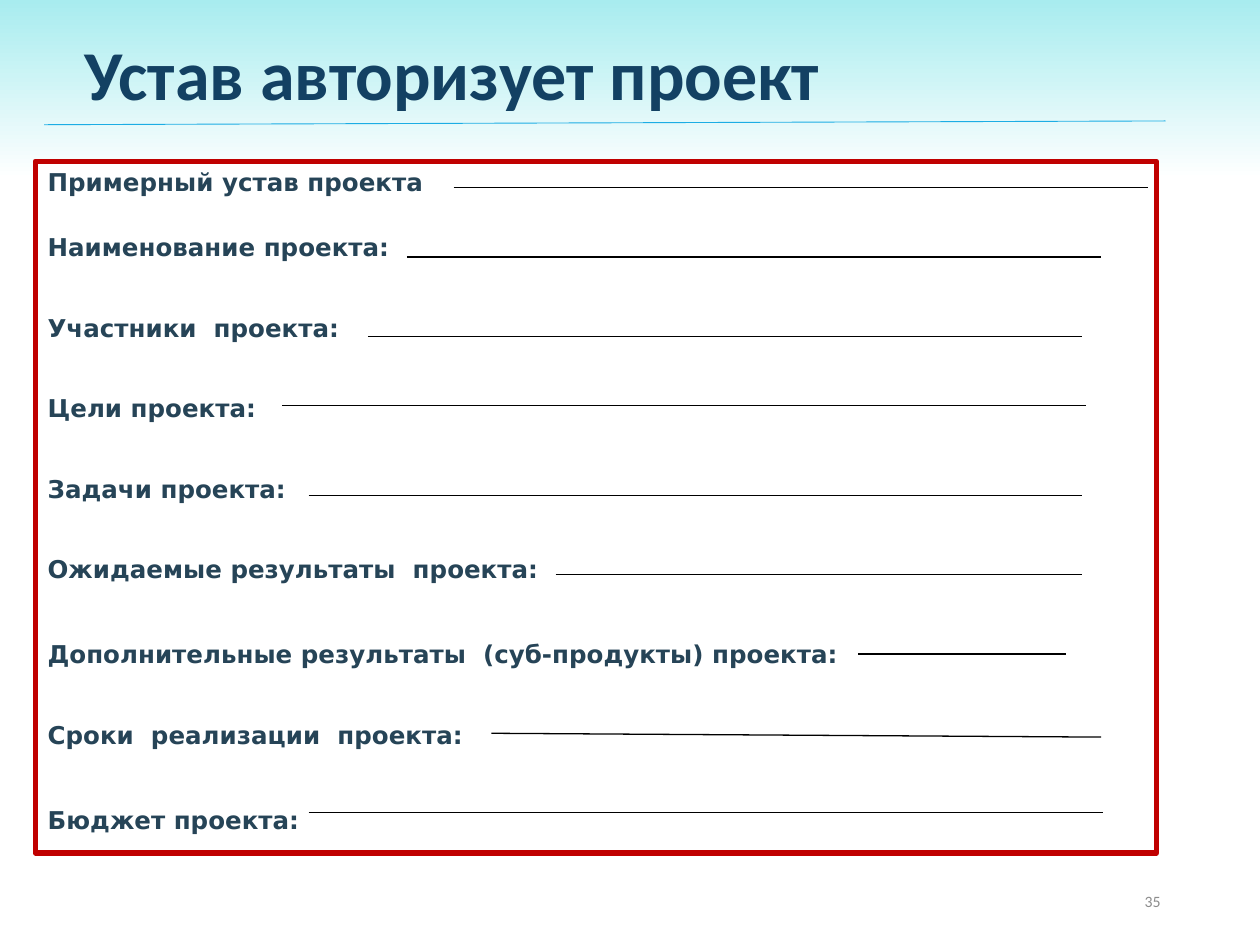
from collections import namedtuple

from lxml import etree
from pptx import Presentation
from pptx import util as u
from pptx.dml import color
from pptx.enum import shapes, text
from pptx.oxml import ns

Box = namedtuple("Box", "left top width height")
Field = namedtuple("Field", "label gap start end row drop")

COLUMNS, ROWS = 100, 75
CELL = u.Inches(0.1)

FIELDS = [
    Field("Примерный устав проекта", 0, 33.2, 88.3, 2.1, 0),
    Field("Наименование проекта:", 20.3, 29.5, 84.6, 7.6, 0),
    Field("Участники  проекта:", 29.2, 26.4, 83.1, 13.9, 0),
    Field("Цели проекта:", 29.2, 19.6, 83.4, 19.4, 0),
    Field("Задачи проекта:", 29.2, 21.7, 83.1, 26.5, 0),
    Field("Ожидаемые результаты  проекта:", 29.2, 41.3, 83.1, 32.8, 0),
    Field("Дополнительные результаты  (суб-продукты) проекта:", 31.7, 65.3, 81.8, 39.1, 0),
    Field("Сроки  реализации  проекта:", 29.2, 36.2, 84.6, 45.4, 0.3),
    Field("Бюджет проекта:", 31.7, 21.7, 84.7, 51.7, 0),
]


def rgb(value):
    return color.RGBColor.from_string(value)


def cells(*counts):
    return [round(count * CELL) for count in counts]


def style(para, name, size, shade, bold=False):
    para.font.name = name
    para.font.size = u.Pt(size)
    para.font.bold = bold
    para.font.color.rgb = rgb(shade)


def add_line(owner, start, end, shade, width):
    line = owner.shapes.add_connector(shapes.MSO_CONNECTOR.STRAIGHT, *cells(*start, *end))
    line.line.color.rgb = rgb(shade)
    line.line.width = u.Pt(width)
    properties = line._element.find(ns.qn("p:spPr"))
    etree.SubElement(properties, ns.qn("a:effectLst"))


def add_background(page):
    fill = page.background.fill
    fill.gradient()
    fill.gradient_angle = 90
    for stop, (position, shade) in zip(fill.gradient_stops, [(0.81, "FFFFFF"), (1, "A8ECEF")]):
        stop.position = position
        stop.color.rgb = rgb(shade)


def add_title(page, box, words):
    title = page.shapes.title
    title.left, title.top, title.width, title.height = cells(*box)
    frame = title.text_frame
    frame.text = words
    frame.vertical_anchor = text.MSO_ANCHOR.MIDDLE
    para = frame.paragraphs[0]
    para.alignment = text.PP_ALIGN.LEFT
    para.line_spacing = 0.9
    style(para, "Calibri", 40, "134163", True)
    add_line(page, (box.left - 2.2, box.top + 7.7), (box.left + 86.8, box.top + 7.4), "1CADE4", 0.5)


def add_charter(page, box):
    group = page.shapes.add_group_shape()
    panel = group.shapes.add_shape(shapes.MSO_SHAPE.RECTANGLE, *cells(*box))
    panel.shadow.inherit = False
    panel.fill.solid()
    panel.fill.fore_color.rgb = rgb("FFFFFF")
    panel.line.color.rgb = rgb("C00000")
    panel.line.width = u.Pt(3)
    frame = panel.text_frame
    frame.word_wrap = True
    frame.vertical_anchor = text.MSO_ANCHOR.TOP
    frame.text = "\n".join(field.label for field in FIELDS)
    for para, field in zip(frame.paragraphs, FIELDS):
        para.alignment = text.PP_ALIGN.LEFT
        para.space_before = u.Pt(field.gap)
        style(para, "DejaVu Sans", 14, "264457", True)
        row = box.top + field.row
        add_line(group, (box.left + field.start, row),
                 (box.left + field.end, row + field.drop), "000000", 0.75)


def add_page_number(page, box, number):
    frame = page.shapes.add_textbox(*cells(*box)).text_frame
    frame.word_wrap = True
    frame.vertical_anchor = text.MSO_ANCHOR.MIDDLE
    frame.text = number
    para = frame.paragraphs[0]
    para.alignment = text.PP_ALIGN.RIGHT
    style(para, "Calibri", 9, "8C8C8C")


def main():
    deck = Presentation()
    deck.slide_width, deck.slide_height = cells(COLUMNS, ROWS)
    page = deck.slides.add_slide(deck.slide_layouts.get_by_name("Title Only"))
    add_background(page)
    add_title(page, Box(5.7, 2.2, 90, 8), "Устав авторизует проект")
    add_page_number(page, Box(70.6, 69.5, 22.5, 4), "35")
    add_charter(page, Box(2.8, 12.8, 89, 54.9))
    deck.save("out.pptx")


if __name__ == "__main__":
    main()
